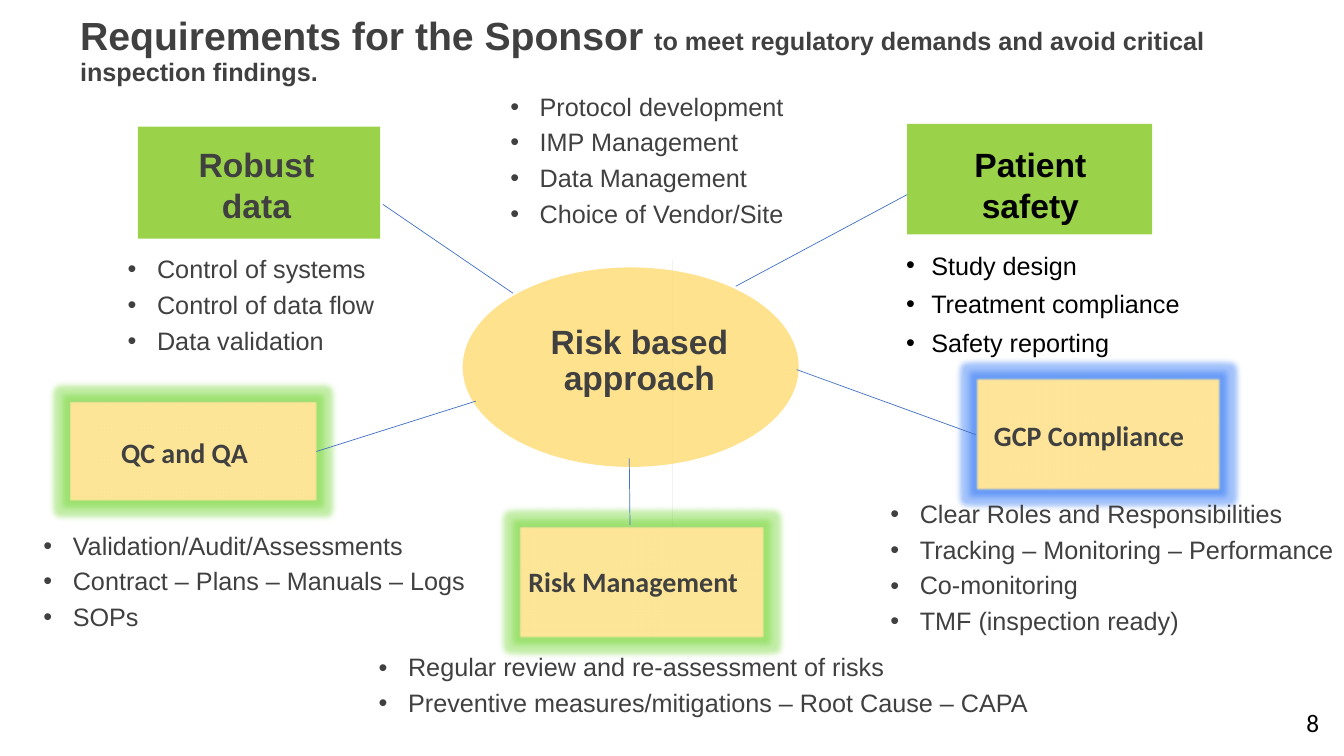
from dataclasses import dataclass

from lxml import etree
from pptx import Presentation
from pptx import util as u
from pptx.dml.color import RGBColor
from pptx.enum import shapes as kinds, text
from pptx.oxml import parse_xml
from pptx.oxml.ns import nsdecls, qn


@dataclass(frozen=True)
class Theme:
    ink: str = "404040"
    black: str = "000000"
    goal: str = "9AD24A"
    activity: str = "FFE699"
    hub: str = "FFD966"
    line: str = "4472C4"
    faint_line: str = "F2F2F2"
    green_glow: str = "70AD47"
    blue_glow: str = "4472C4"
    font: str = "Arial"
    label_font: str = "Calibri"
    title_size: int = 28
    heading_size: int = 24
    label_size: int = 20
    body_size: int = 18


THEME = Theme()
LEFT, CENTER = text.PP_ALIGN.LEFT, text.PP_ALIGN.CENTER


def place(shape, box):
    shape.left, shape.top, shape.width, shape.height = map(u.Pt, box)


def format_run(run, size, color=THEME.ink, bold=False, font=THEME.font):
    run.font.name = font
    run.font.size = u.Pt(size)
    run.font.bold = bold
    run.font.color.rgb = RGBColor.from_string(color)


def prepare_frame(shape, anchor=text.MSO_ANCHOR.TOP):
    frame = shape.text_frame
    frame.word_wrap = True
    frame.auto_size = text.MSO_AUTO_SIZE.NONE
    frame.vertical_anchor = anchor
    return frame


def add_text_box(container, box):
    """Add a text box without inner margins."""
    shape = container.add_textbox(*map(u.Pt, box))
    frame = shape.text_frame
    frame.margin_left = frame.margin_right = u.Pt(0)
    frame.margin_top = frame.margin_bottom = u.Pt(0)
    return shape


def write_label(shape, label, size, align=LEFT, spacing=0.9, **style):
    paragraph = prepare_frame(shape).paragraphs[0]
    paragraph.text = label
    paragraph.alignment = align
    paragraph.line_spacing = spacing
    paragraph.space_before = u.Pt(0)
    format_run(paragraph.runs[0], size, **style)


def write_bullets(shape, items, indent=21, spacing=0.9, color=THEME.ink):
    frame = prepare_frame(shape)
    for index, item in enumerate(items):
        paragraph = frame.paragraphs[0] if index == 0 else frame.add_paragraph()
        paragraph.text = item
        properties = paragraph._p.get_or_add_pPr()
        properties.set("marL", str(u.Pt(indent)))
        properties.set("indent", str(-u.Pt(indent)))
        etree.SubElement(properties, qn("a:buFont")).set("typeface", THEME.font)
        etree.SubElement(properties, qn("a:buChar")).set("char", "•")
        paragraph.line_spacing = spacing
        paragraph.space_before = u.Pt(6 if index else 0)
        format_run(paragraph.runs[0], THEME.body_size, color)


def write_title(title):
    place(title, (50, 0, 886, 74))
    paragraph = prepare_frame(title, text.MSO_ANCHOR.MIDDLE).paragraphs[0]
    paragraph.alignment = LEFT
    paragraph.line_spacing = 0.9
    for words, size in (
        ("Requirements for the Sponsor ", THEME.title_size),
        ("to meet regulatory demands and avoid critical inspection findings.", THEME.body_size),
    ):
        run = paragraph.add_run()
        run.text = words
        format_run(run, size, bold=True)


def add_filled_shape(container, kind, box, color):
    shape = container.add_shape(kind, *map(u.Pt, box))
    shape.shadow.inherit = False
    shape.fill.solid()
    shape.fill.fore_color.rgb = RGBColor.from_string(color)
    shape.line.fill.background()
    return shape


def add_goal(slide, heading, body, goal):
    """Fill a heading and list placeholder pair, with a green panel behind."""
    label, panel_box, heading_box, color, list_box, items, indent, spacing = goal
    panel = add_filled_shape(slide.shapes, kinds.MSO_SHAPE.RECTANGLE, panel_box, THEME.goal)
    heading.element.addprevious(panel.element)
    place(heading, heading_box)
    write_label(heading, label, THEME.heading_size, CENTER, 1.0, color=color, bold=True)
    place(body, list_box)
    write_bullets(body, items, indent, spacing, color)


def add_glow(shape, color):
    """Surround a shape with a translucent glow and soften its edge."""
    properties = shape.element.spPr
    properties.remove(properties.find(qn("a:effectLst")))
    properties.append(parse_xml(
        f'<a:effectLst {nsdecls("a")}><a:glow rad="{u.Pt(8)}"><a:srgbClr val="{color}">'
        '<a:satMod val="175000"/><a:alpha val="40000"/></a:srgbClr></a:glow>'
        f'<a:softEdge rad="{u.Pt(1)}"/></a:effectLst>'))


def add_activity(slide, label, box, label_box, glow, outlined, list_box, items):
    panel = add_filled_shape(slide.shapes, kinds.MSO_SHAPE.RECTANGLE, box, THEME.activity)
    if outlined:
        panel.line.color.rgb = RGBColor.from_string(THEME.line)
        panel.line.width = u.Pt(0.5)
    add_glow(panel, glow)
    write_label(add_text_box(slide.shapes, label_box), label, THEME.label_size,
                bold=True, font=THEME.label_font)
    write_bullets(add_text_box(slide.shapes, list_box), items)


def add_hub(slide):
    hub = slide.shapes.add_group_shape().shapes
    ellipse = add_filled_shape(hub, kinds.MSO_SHAPE.OVAL, (330.5, 191, 240, 142.5), THEME.hub)
    color = ellipse.element.spPr.find(qn("a:solidFill"))[0]
    etree.SubElement(color, qn("a:alpha")).set("val", "74000")
    write_label(add_text_box(hub, (373.5, 232.5, 166.5, 89)), "Risk based approach",
                THEME.heading_size, CENTER, bold=True)


def add_line(slide, start, end, color=THEME.line):
    line = slide.shapes.add_connector(
        kinds.MSO_CONNECTOR.STRAIGHT, *map(u.Pt, (*start, *end)))
    line.line.color.rgb = RGBColor.from_string(color)
    line.line.width = u.Pt(0.5)
    etree.SubElement(line.element.spPr, qn("a:effectLst"))


GOALS = (
    ("Robust data", (98.5, 90.5, 173, 80), (111.5, 99.5, 143.5, 70), THEME.ink,
     (84, 180, 251, 125),
     ("Control of systems", "Control of data flow", "Data validation"), 21, 0.9),
    ("Patient safety", (648, 88.5, 175, 79), (665.5, 99.5, 141, 78), THEME.black,
     (640, 175, 258.5, 95),
     ("Study design", "Treatment compliance", "Safety reporting"), 18, 1.0),
)

ACTIVITIES = (
    ("Risk Management", (371, 376, 175, 80), (377.5, 406, 188.5, 28),
     THEME.green_glow, True, (270.5, 468, 493, 70),
     ("Regular review and re-assessment of risks",
      "Preventive measures/mitigations – Root Cause – CAPA")),
    ("GCP Compliance", (697, 270, 175, 80), (710, 301.5, 188.5, 28),
     THEME.blue_glow, False, (636, 358.5, 323, 126),
     ("Clear Roles and Responsibilities", "Tracking – Monitoring – Performance",
      "Co-monitoring", "TMF (inspection ready)")),
    ("QC and QA", (49.5, 286.5, 177, 71.5), (86.5, 314, 126.5, 24.5),
     THEME.green_glow, True, (31, 381, 350, 126),
     ("Validation/Audit/Assessments", "Contract – Plans – Manuals – Logs", "SOPs")),
)

SPOKES = (
    ((449.5, 327.5), (450, 375)),
    ((226, 322.5), (340, 286.5)),
    ((648, 139), (525.5, 204.5)),
    ((569, 264), (697, 310.5)),
    ((273.5, 146), (366.5, 209.5)),
)


def main():
    presentation = Presentation()
    presentation.slide_width, presentation.slide_height = u.Pt(960), u.Pt(540)
    comparison_layout = presentation.slide_layouts[4]
    slide = presentation.slides.add_slide(comparison_layout)
    title, *bodies = slide.placeholders

    write_title(title)
    for heading, body, goal in zip(bodies[::2], bodies[1::2], GOALS):
        add_goal(slide, heading, body, goal)
    add_line(slide, (480, 186), (480, 376), THEME.faint_line)
    add_hub(slide)
    write_bullets(add_text_box(slide.shapes, (364.5, 67.5, 358.5, 109.5)),
                  ("Protocol development", "IMP Management",
                   "Data Management", "Choice of Vendor/Site"))
    for activity in ACTIVITIES:
        add_activity(slide, *activity)
    for start, end in SPOKES:
        add_line(slide, start, end)
    page_number = slide.shapes.add_textbox(*map(u.Pt, (926, 502, 34, 34)))
    write_label(page_number, "8", THEME.body_size, spacing=1.0,
                color=THEME.black, font=THEME.label_font)

    presentation.save("out.pptx")


if __name__ == "__main__":
    main()
